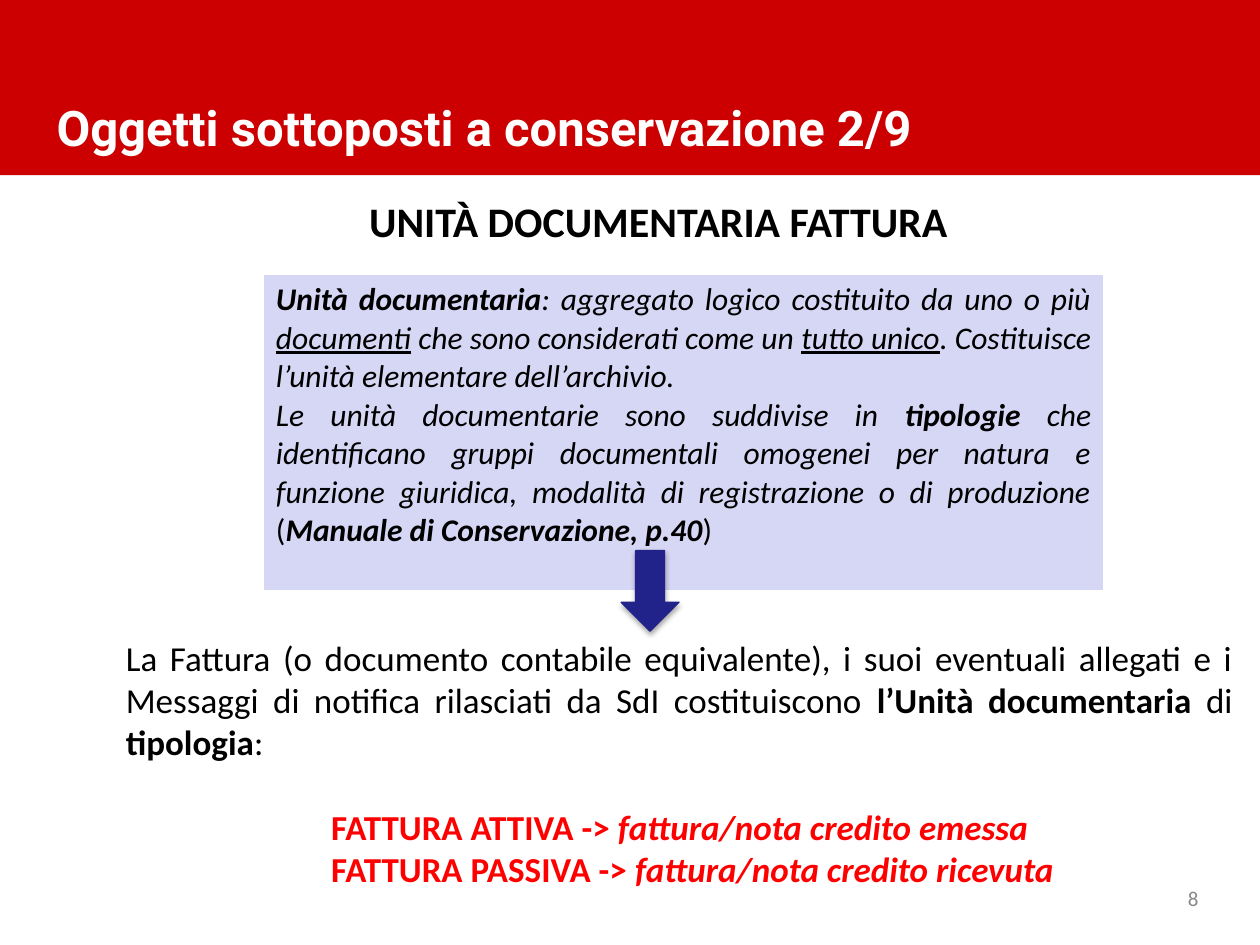
from pptx import Presentation
from pptx.dml.color import RGBColor
from pptx.enum.shapes import MSO_SHAPE as Shape
from pptx.enum.text import MSO_ANCHOR as Anchor, PP_ALIGN as Align
from pptx.oxml import parse_xml
from pptx.oxml.ns import nsdecls
from pptx.util import Inches, Pt

COLS, ROWS = 100, 75
RED, NAVY, LILAC = "CC0000", "22228B", "D6D6F5"
BLACK, WHITE, GREY, ALERT = "000000", "FFFFFF", "898989", "FF0000"


def tint(code):
    return RGBColor.from_string(code)


class Page:
    """Style and slide; every box is (left, top, width, height) in grid units."""

    def __init__(self, deck, font="Calibri"):
        self.slide = deck.slides.add_slide(deck.slide_layouts[6])
        self.shapes = self.slide.shapes
        self.col = deck.slide_width / COLS
        self.row = deck.slide_height / ROWS
        self.font = font

    def place(self, box):
        x, y, w, h = box
        return [round(v) for v in (x * self.col, y * self.row,
                                   w * self.col, h * self.row)]

    def para(self, para, runs, size, color=BLACK, align=Align.LEFT, font=None):
        """Fill a paragraph from (text, marks); marks hold b, i, u."""
        para.alignment = align
        face = para.font
        face.name, face.size = font or self.font, Pt(size)
        face.color.rgb = tint(color)
        for attr, mark in (("bold", "b"), ("italic", "i"), ("underline", "u")):
            flags = [mark in marks for _, marks in runs]
            if all(flags):
                setattr(face, attr, True)
        for text, marks in runs:
            run = para.add_run()
            run.text = text
            run.font.name, run.font.size = face.name, face.size
            run.font.color.rgb = tint(color)
            run.font.bold = "b" in marks
            run.font.italic = "i" in marks
            run.font.underline = "u" in marks

    def text(self, box, paras, anchor=Anchor.TOP, **style):
        """Add a text box; returns its paragraphs."""
        frame = self.shapes.add_textbox(*self.place(box)).text_frame
        frame.word_wrap = True
        frame.vertical_anchor = anchor
        self.fill(frame, paras, **style)
        return frame.paragraphs

    def fill(self, frame, paras, **style):
        for i, runs in enumerate(paras):
            para = frame.add_paragraph() if i else frame.paragraphs[0]
            self.para(para, runs, **style)

    def shape(self, kind, box, color, line=None):
        item = self.shapes.add_shape(kind, *self.place(box))
        item.shadow.inherit = False
        item.fill.solid()
        item.fill.fore_color.rgb = tint(color)
        if line:
            item.line.color.rgb = tint(color)
            item.line.width = Pt(line)
        else:
            item.line.fill.background()
        return item

    def shade(self, item, blur, dist, alpha):
        """Give a shape a soft shadow straight below it."""
        item.shadow.inherit = True
        item._element.spPr.append(parse_xml(
            f'<a:effectLst {nsdecls("a")}><a:outerShdw blurRad="{Pt(blur)}" '
            f'dist="{Pt(dist)}" dir="5400000" rotWithShape="0">'
            f'<a:srgbClr val="{BLACK}"><a:alpha val="{alpha * 1000}"/>'
            '</a:srgbClr></a:outerShdw></a:effectLst>'))

    def panel(self, box, paras, color, **style):
        """Add a one-cell table with white borders."""
        table = self.shapes.add_table(1, 1, *self.place(box)).table
        table.first_row = table.horz_banding = False
        cell = table.cell(0, 0)
        cell.fill.solid()
        cell.fill.fore_color.rgb = tint(color)
        props = cell._tc.get_or_add_tcPr()
        for i, (side, width) in enumerate(zip("LRTB", (1, 1, 1, 3))):
            props.insert(i, parse_xml(
                f'<a:ln{side} {nsdecls("a")} w="{Pt(width)}"><a:solidFill>'
                f'<a:srgbClr val="{WHITE}"/></a:solidFill></a:ln{side}>'))
        self.fill(cell.text_frame, paras, **style)


def main():
    deck = Presentation()
    deck.slide_width, deck.slide_height = Inches(10), Inches(7.5)
    page = Page(deck)

    page.shape(Shape.RECTANGLE, (0, 0, COLS, 13.9), RED)
    page.text((3.5, 6.8, 89.9, 6.6),
              [[("Oggetti sottoposti a conservazione 2/9", "b")]],
              Anchor.MIDDLE, size=28, color=WHITE, font="Roboto")
    page.text((5.5, 15, 93.5, 5), [[("UNITÀ DOCUMENTARIA FATTURA", "b")]],
              size=24, align=Align.CENTER)
    page.text((91.7, 69.3, 4.4, 4), [[("8", "")]], Anchor.MIDDLE,
              size=12, color=GREY, align=Align.RIGHT)

    page.panel((20.9, 21.8, 66.7, 25.2), [
        [("Unità documentaria", "bi"),
         (": aggregato logico costituito da uno o più ", "i"),
         ("documenti", "iu"),
         (" che sono considerati come un ", "i"),
         ("tutto unico", "iu"),
         (". Costituisce l’unità elementare dell’archivio.", "i")],
        [("Le unità documentarie sono suddivise in ", "i"),
         ("tipologie", "bi"),
         (" che identificano gruppi documentali omogenei per natura e "
          "funzione giuridica, modalità di registrazione o di produzione", "i"),
         (" (", ""),
         ("Manuale di Conservazione, p.40", "bi"),
         (")", "")],
    ], LILAC, size=18, align=Align.JUSTIFY)

    arrow = page.shape(Shape.DOWN_ARROW, (49.3, 43.7, 4.6, 6.4), NAVY, 0.75)
    page.shade(arrow, blur=3.1, dist=1.8, alpha=35)

    page.text((9, 50, 89.8, 11), [
        [("La Fattura (o documento contabile equivalente), i suoi eventuali "
          "allegati e i Messaggi di notifica rilasciati da SdI "
          "costituiscono ", ""),
         ("l’Unità documentaria ", "b"), ("di ", ""),
         ("tipologia", "b"), (":", "")],
    ], size=20, align=Align.JUSTIFY)
    page.text((25.3, 63.4, 73.5, 7.8), [
        [(f"FATTURA {kind} -> ", "b"), (f"fattura/nota credito {state}", "bi")]
        for kind, state in (("ATTIVA", "emessa"), ("PASSIVA", "ricevuta"))
    ], size=20, color=ALERT)

    deck.save("out.pptx")


if __name__ == "__main__":
    main()
